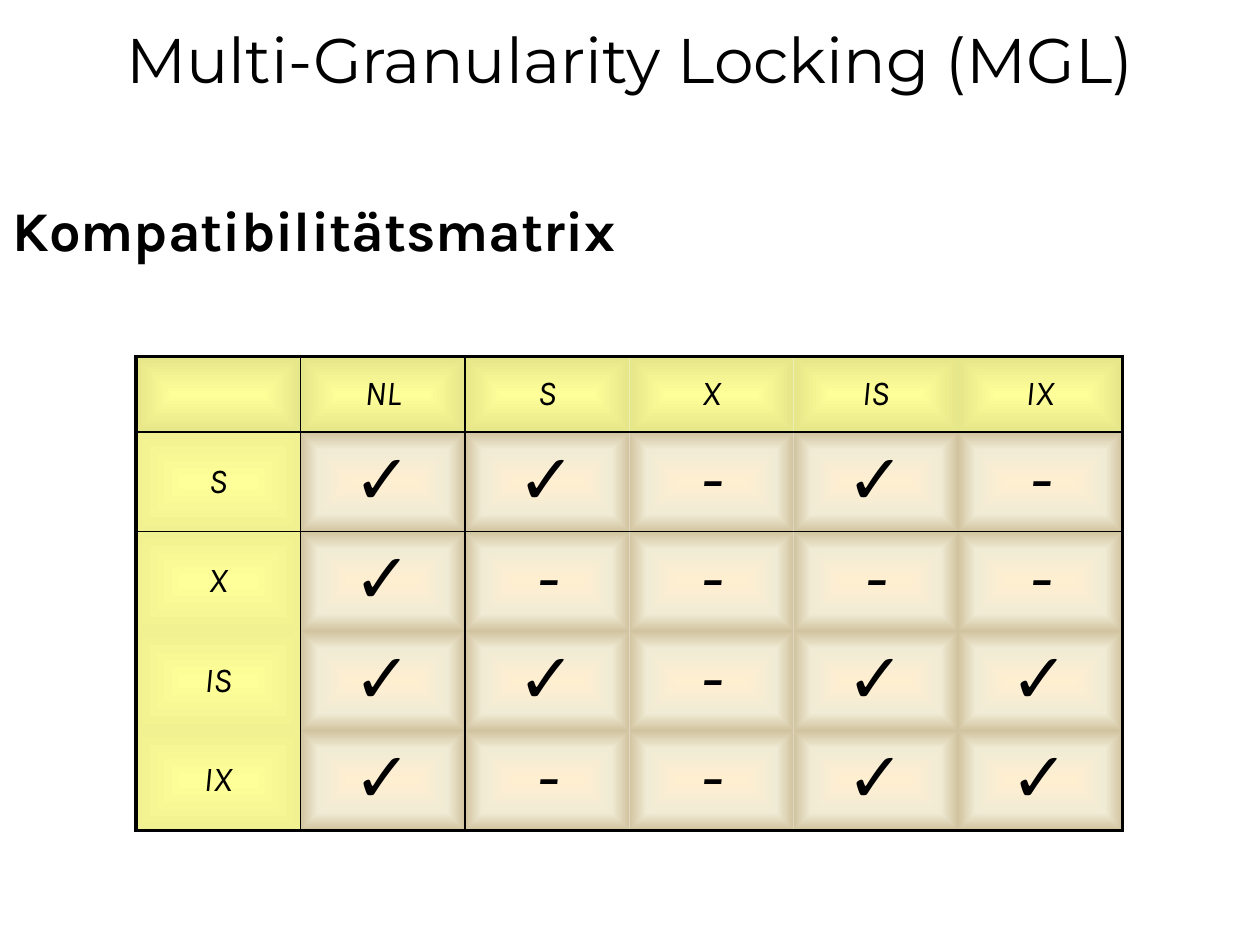
from lxml.etree import SubElement
from pptx import Presentation
from pptx.dml.color import RGBColor
from pptx.enum.text import MSO_ANCHOR, PP_ALIGN
from pptx.oxml.ns import qn
from pptx.util import Inches, Pt

# Content
TITLE = "Multi-Granularity Locking (MGL)"
HEADING = "Kompatibilitätsmatrix"
MATRIX = [
    ["", "NL", "S", "X", "IS", "IX"],
    ["S", "✓", "✓", "-", "✓", "-"],
    ["X", "✓", "-", "-", "-", "-"],
    ["IS", "✓", "✓", "-", "✓", "✓"],
    ["IX", "✓", "-", "-", "✓", "✓"],
]

# Style
BLACK = RGBColor(0x00, 0x00, 0x00)
YELLOW = RGBColor(0xFF, 0xFF, 0x99)
HEADER_GRADIENT = [(0, YELLOW), (100, RGBColor(0xE6, 0xE6, 0x8A))]
LABEL_GRADIENT = [(0, YELLOW), (100, RGBColor(0xF1, 0xF1, 0x91))]
VALUE_GRADIENT = [(0, RGBColor(0xFF, 0xEF, 0xD1)), (65, RGBColor(0xF0, 0xEB, 0xD5)),
                  (100, RGBColor(0xD1, 0xC3, 0x9F))]
OUTER, INNER = 2.25, 1
COLUMN_WIDTH, HEADER_HEIGHT, ROW_HEIGHT = 1.305, 0.6, 0.79
NO_STYLE = "{2D5ABB26-0587-4C30-8999-92F81FD0307C}"


def write(paragraph, text, font_name, size, bold=False, italic=False):
    paragraph.text = text
    for run in paragraph.runs:
        font = run.font
        font.name, font.size = font_name, Pt(size)
        font.bold, font.italic = bold, italic
        font.color.rgb = BLACK


def add_text(slide, box, text, font_name, size, align, anchor, bold=False):
    text_frame = slide.shapes.add_textbox(*map(Inches, box)).text_frame
    text_frame.word_wrap = True
    text_frame.vertical_anchor = anchor
    paragraph = text_frame.paragraphs[0]
    paragraph.alignment = align
    write(paragraph, text, font_name, size, bold)


def add_color(parent, color):
    SubElement(parent, qn("a:srgbClr"), val=str(color))


def set_borders(cell, borders):
    properties = cell._tc.get_or_add_tcPr()
    for side in "LRTB":
        if side in borders:
            line = SubElement(properties, qn(f"a:ln{side}"), w=str(Pt(borders[side])))
            add_color(SubElement(line, qn("a:solidFill")), BLACK)


def set_gradient(cell, stops):
    gradient = SubElement(cell._tc.get_or_add_tcPr(), qn("a:gradFill"), rotWithShape="0")
    stop_list = SubElement(gradient, qn("a:gsLst"))
    for position, color in stops:
        add_color(SubElement(stop_list, qn("a:gs"), pos=str(position * 1000)), color)
    shade = SubElement(gradient, qn("a:path"), path="shape")
    SubElement(shade, qn("a:fillToRect"), l="50000", t="50000", r="50000", b="50000")


def cell_borders(row, column):
    borders = {}
    if column < 2:
        borders["L"] = INNER if column else OUTER
    if row < 2:
        borders["T"] = INNER if row else OUTER
    if column in (0, len(MATRIX[0]) - 1):
        borders["R"] = OUTER if column else INNER
    if row in (0, len(MATRIX) - 1):
        borders["B"] = OUTER if row else INNER
    return borders


def add_matrix(slide):
    rows, columns = len(MATRIX), len(MATRIX[0])
    frame = slide.shapes.add_table(
        rows, columns, Inches(1.08), Inches(2.83), Inches(columns * COLUMN_WIDTH),
        Inches(HEADER_HEIGHT + (rows - 1) * ROW_HEIGHT))
    table = frame.table
    table.first_row = table.horz_banding = False
    table._tbl.tblPr.find(qn("a:tableStyleId")).text = NO_STYLE
    for column in table.columns:
        column.width = Inches(COLUMN_WIDTH)
    for index, row in enumerate(table.rows):
        row.height = Inches(ROW_HEIGHT if index else HEADER_HEIGHT)

    for r, values in enumerate(MATRIX):
        for c, value in enumerate(values):
            cell = table.cell(r, c)
            cell.vertical_anchor = MSO_ANCHOR.MIDDLE
            paragraph = cell.text_frame.paragraphs[0]
            paragraph.alignment = PP_ALIGN.CENTER
            paragraph.line_spacing = 0.9
            write(paragraph, value, "Karla", 40 if r and c else 20, italic=True)
            set_borders(cell, cell_borders(r, c))
            body_gradient = VALUE_GRADIENT if c else LABEL_GRADIENT
            set_gradient(cell, body_gradient if r else HEADER_GRADIENT)


def main():
    presentation = Presentation()
    presentation.slide_width, presentation.slide_height = Inches(10), Inches(7.5)
    slide = presentation.slides.add_slide(presentation.slide_layouts[6])
    add_text(slide, (0, 0, 10, 0.92), TITLE, "Montserrat", 36,
             PP_ALIGN.CENTER, MSO_ANCHOR.MIDDLE)
    add_text(slide, (0, 1.5, 5.42, 0.63), HEADING, "Karla", 32,
             PP_ALIGN.LEFT, MSO_ANCHOR.TOP, bold=True)
    add_matrix(slide)
    presentation.save("out.pptx")


if __name__ == "__main__":
    main()
